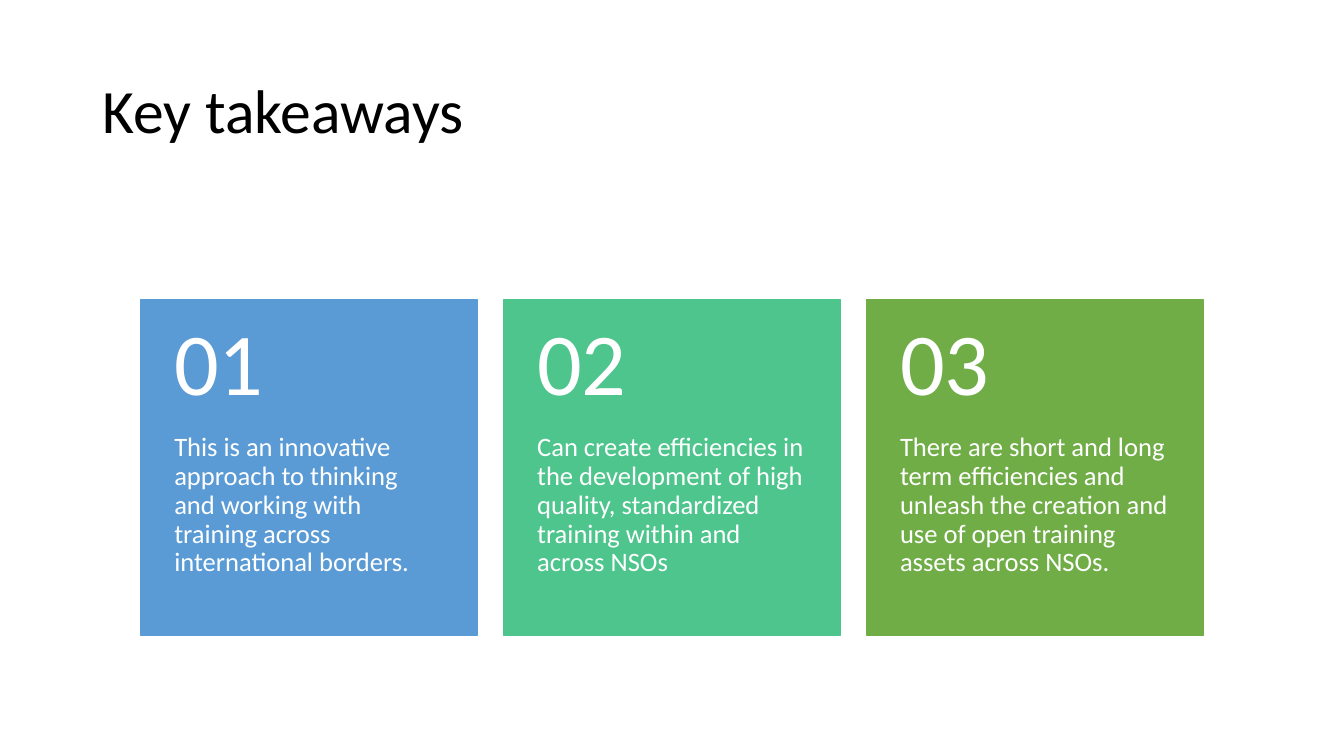
from dataclasses import dataclass

from pptx import Presentation
from pptx.dml.color import RGBColor
from pptx.enum import shapes, text
from pptx.util import Pt

TITLE = "Key takeaways"
TAKEAWAYS = [
    "This is an innovative approach to thinking and working with training "
    "across international borders.\u00a0".rstrip(),
    "Can create efficiencies in the development of high quality, standardized "
    "training within and across NSOs",
    "There are short and long term efficiencies and unleash the creation and "
    "use of open training assets across NSOs.",
]


@dataclass(frozen=True)
class Theme:
    font: str = "Calibri"
    title_color: str = "000000"
    card_text: str = "FFFFFF"
    card_fills: tuple = ("5B9BD5", "4DC58D", "70AD47")
    title_size: float = 44
    number_size: float = 63
    body_size: float = 19
    line_spacing: float = 0.9


THEME = Theme()

# Lengths in points
SLIDE_SIZE = (960, 540)
TITLE_BOX = (66, 28.75, 828, 104.4)
TITLE_INSETS = (7.2, 3.6, 7.2, 3.6)
CARD_LEFT, CARD_TOP, CARD_SIZE, CARD_GAP = 100.8, 214, 240, 19.2
NUMBER_HEIGHT = 96
NUMBER_INSETS = (23.7, 13, 23.7, 13)
BODY_INSETS = (23.7, 0, 23.7, 26)


def add_text(slide, content, box, insets, size, color, anchor):
    shape = slide.shapes.add_textbox(*map(Pt, box))
    frame = shape.text_frame
    frame.word_wrap = True
    frame.vertical_anchor = anchor
    (frame.margin_left, frame.margin_top,
     frame.margin_right, frame.margin_bottom) = map(Pt, insets)
    frame.text = content
    paragraph = frame.paragraphs[0]
    paragraph.line_spacing = THEME.line_spacing
    font = paragraph.runs[0].font
    font.name = THEME.font
    font.size = Pt(size)
    font.color.rgb = RGBColor.from_string(color)


def add_card(slide, index, takeaway, fill):
    left = CARD_LEFT + index * (CARD_SIZE + CARD_GAP)
    card = slide.shapes.add_shape(
        shapes.MSO_SHAPE.RECTANGLE, *map(Pt, (left, CARD_TOP, CARD_SIZE, CARD_SIZE)))
    card.shadow.inherit = False
    card.fill.solid()
    card.fill.fore_color.rgb = RGBColor.from_string(fill)
    card.line.color.rgb = RGBColor.from_string(fill)
    card.line.width = Pt(1)

    body_box = (left, CARD_TOP + NUMBER_HEIGHT, CARD_SIZE, CARD_SIZE - NUMBER_HEIGHT)
    add_text(slide, takeaway, body_box, BODY_INSETS,
             THEME.body_size, THEME.card_text, text.MSO_ANCHOR.TOP)
    number_box = (left, CARD_TOP, CARD_SIZE, NUMBER_HEIGHT)
    add_text(slide, f"{index + 1:02d}", number_box, NUMBER_INSETS,
             THEME.number_size, THEME.card_text, text.MSO_ANCHOR.MIDDLE)


def main():
    presentation = Presentation()
    presentation.slide_width, presentation.slide_height = map(Pt, SLIDE_SIZE)
    slide = presentation.slides.add_slide(presentation.slide_layouts[6])
    add_text(slide, TITLE, TITLE_BOX, TITLE_INSETS,
             THEME.title_size, THEME.title_color, text.MSO_ANCHOR.MIDDLE)
    for index, (takeaway, fill) in enumerate(zip(TAKEAWAYS, THEME.card_fills)):
        add_card(slide, index, takeaway, fill)
    presentation.save("out.pptx")


if __name__ == "__main__":
    main()
